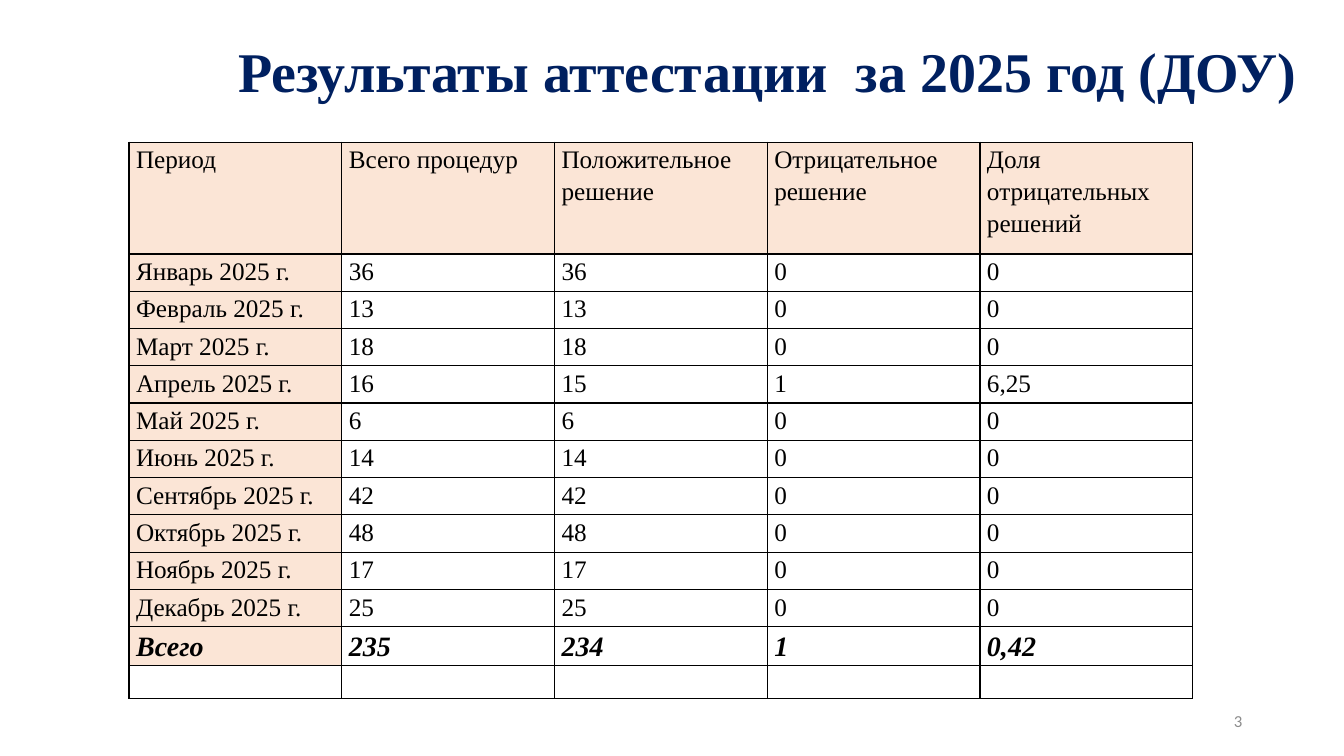
import pptx
import pptx.dml.color
import pptx.enum.text
import pptx.oxml
import pptx.oxml.ns
import pptx.util
from pptx.util import Inches

RGBColor = pptx.dml.color.RGBColor
NAVY = RGBColor(0x00, 0x20, 0x60)
BLACK = RGBColor(0x00, 0x00, 0x00)
GRAY = RGBColor(0x8C, 0x8C, 0x8C)
PEACH = RGBColor(0xFB, 0xE5, 0xD6)
SERIF = "Times New Roman"
ALIGN = pptx.enum.text.PP_ALIGN
ANCHOR = pptx.enum.text.MSO_ANCHOR

HEADINGS = ["Период", "Всего процедур", "Положительное решение",
            "Отрицательное решение", "Доля отрицательных решений"]
MONTHS = [
    ("Январь", "36", "36", "0", "0"),
    ("Февраль", "13", "13", "0", "0"),
    ("Март", "18", "18", "0", "0"),
    ("Апрель", "16", "15", "1", "6,25"),
    ("Май", "6", "6", "0", "0"),
    ("Июнь", "14", "14", "0", "0"),
    ("Сентябрь", "42", "42", "0", "0"),
    ("Октябрь", "48", "48", "0", "0"),
    ("Ноябрь", "17", "17", "0", "0"),
    ("Декабрь", "25", "25", "0", "0"),
]
TOTALS = ["Всего", "235", "234", "1", "0,42"]


def set_font(para, name, size, color, bold=False, italic=False):
    font = para.font
    font.name = name
    font.size = pptx.util.Pt(size)
    font.color.rgb = color
    font.bold = bold
    font.italic = italic


def fill_title(page, text):
    title = page.shapes.title
    title.left, title.top = Inches(2.14), Inches(0.31)
    title.width, title.height = Inches(10.94), Inches(0.77)
    frame = title.text_frame
    frame.text = text
    frame.word_wrap = True
    frame.auto_size = pptx.enum.text.MSO_AUTO_SIZE.NONE
    frame.vertical_anchor = ANCHOR.TOP
    para = frame.paragraphs[0]
    para.alignment = ALIGN.CENTER
    para.line_spacing = 1.0
    set_font(para, SERIF, 40, NAVY, bold=True)


def add_page_number(page, number):
    box = page.shapes.add_textbox(Inches(9.42), Inches(6.95), Inches(3), Inches(0.4))
    frame = box.text_frame
    frame.word_wrap = True
    frame.vertical_anchor = ANCHOR.MIDDLE
    frame.text = number
    para = frame.paragraphs[0]
    para.alignment = ALIGN.RIGHT
    set_font(para, "Calibri", 12, GRAY)


def add_borders(cell):
    properties = cell._tc.get_or_add_tcPr()
    for side in ("lnL", "lnR", "lnT", "lnB"):
        properties.append(pptx.oxml.parse_xml(
            f'<a:{side} {pptx.oxml.ns.nsdecls("a")} w="12700">'
            f'<a:solidFill><a:srgbClr val="{BLACK}"/></a:solidFill></a:{side}>'))


def format_cell(cell, text, shaded, total):
    cell.margin_left = cell.margin_right = Inches(0.07)
    cell.margin_top = cell.margin_bottom = 0
    add_borders(cell)
    if shaded:
        cell.fill.solid()
        cell.fill.fore_color.rgb = PEACH
    else:
        cell.fill.background()
    if text:
        cell.text = text
        para = cell.text_frame.paragraphs[0]
        para.line_spacing = 1.15
        set_font(para, SERIF, 20 if total else 18, BLACK, bold=total, italic=total)


def add_results_table(page):
    months = [[f"{month} 2025 г.", *values] for month, *values in MONTHS]
    blank = [""] * len(HEADINGS)
    rows = [HEADINGS, *months, TOTALS, blank]
    heights = [1.11] + [0.37] * (len(rows) - 2) + [0.33]
    frame = page.shapes.add_table(len(rows), len(HEADINGS), Inches(1.28), Inches(1.41),
                                  Inches(10.55), Inches(sum(heights)))
    table = frame.table
    table.first_row = table.horz_banding = False
    for row, height in zip(table.rows, heights):
        row.height = Inches(height)
    for row_index, texts in enumerate(rows):
        for column_index, text in enumerate(texts):
            # Header row and period column are shaded, the blank row is not
            shaded = texts is not blank and (row_index == 0 or column_index == 0)
            format_cell(table.cell(row_index, column_index), text, shaded, texts is TOTALS)


def main():
    deck = pptx.Presentation()
    deck.slide_width, deck.slide_height = Inches(13.33), Inches(7.5)
    page = deck.slides.add_slide(deck.slide_layouts.get_by_name("Title Only"))

    # Heading and page number
    fill_title(page, "Результаты аттестации  за 2025 год (ДОУ)")
    add_page_number(page, "3")

    # Monthly results
    add_results_table(page)
    deck.save("out.pptx")


if __name__ == "__main__":
    main()
